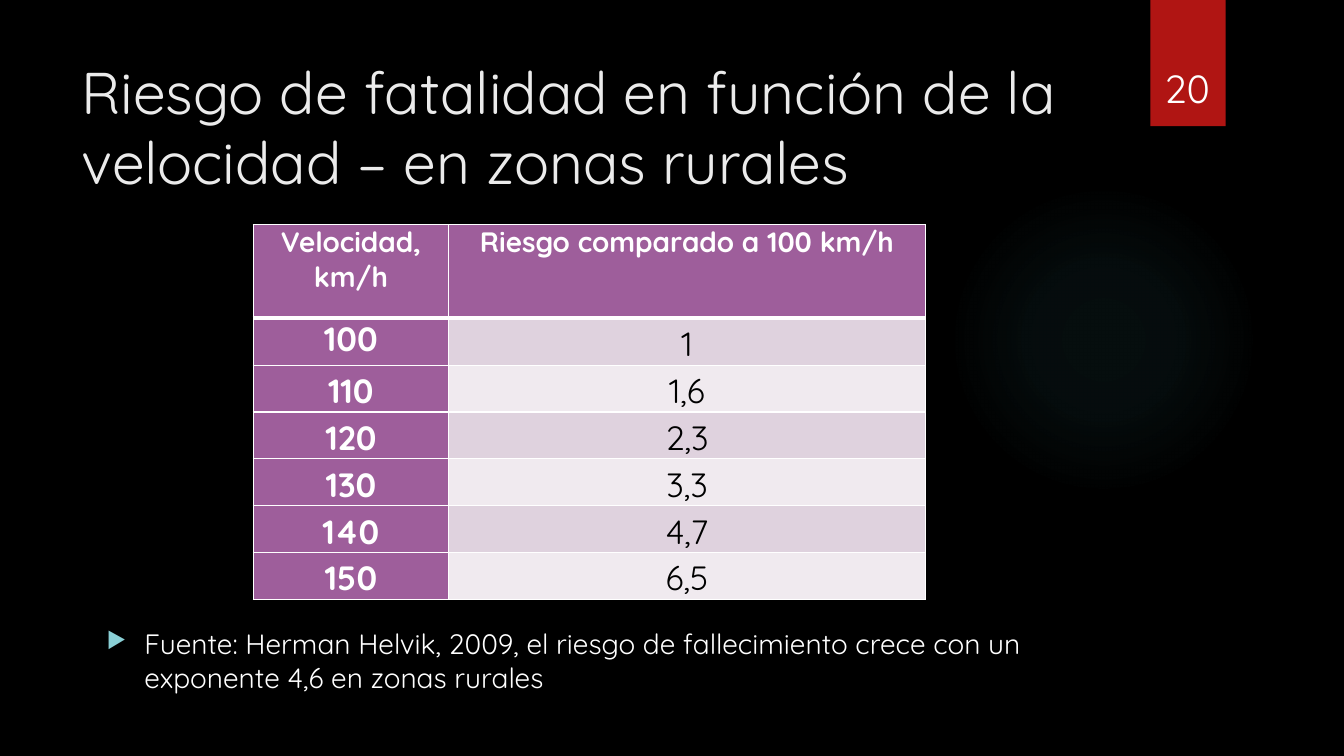
"""Build the slide on fatality risk by speed in rural areas."""
import lxml.etree
import pptx
import pptx.dml.color
import pptx.enum.shapes
import pptx.enum.text
import pptx.oxml
import pptx.oxml.ns
import pptx.util

Cm = pptx.util.Cm
SHAPE = pptx.enum.shapes.MSO_SHAPE
ALIGN = pptx.enum.text.PP_ALIGN
ANCHOR = pptx.enum.text.MSO_ANCHOR
FONT = "Quicksand"
WHITE = "FFFFFF"
PURPLE = "9E5E9B"
BANDS = ("DFD2DE", "F0EAEF")
HEADINGS = ("Velocidad, km/h", "Riesgo comparado a 100 km/h")
RISKS = (("100", "1"), ("110", "1,6"), ("120", "2,3"),
         ("130", "3,3"), ("140", "4,7"), ("150", "6,5"))
GLOW_STOPS = ((0, 7), (36, 6), (69, 0))


def color(value):
    """Turn a hex string into a colour."""
    return pptx.dml.color.RGBColor.from_string(value)


def element(xml):
    """Parse a DrawingML element whose opening tag holds a {ns} slot."""
    return pptx.oxml.parse_xml(xml.replace("{ns}", pptx.oxml.ns.nsdecls("a")))


def write(para, text, size, ink=WHITE, bold=False):
    """Add one formatted run to a paragraph."""
    span = para.add_run()
    span.text = text
    span.font.name = FONT
    span.font.size = pptx.util.Pt(size)
    span.font.bold = bold
    span.font.color.rgb = color(ink)


def add_text(page, place, text, size, ink=WHITE, align=ALIGN.LEFT, anchor=ANCHOR.TOP):
    """Add a wrapped text box and return its paragraph."""
    frame = page.shapes.add_textbox(*map(Cm, place)).text_frame
    frame.word_wrap = True
    frame.vertical_anchor = anchor
    para = frame.paragraphs[0]
    para.alignment = align
    write(para, text, size, ink)
    return para


def add_bullet(para):
    """Give a paragraph a hanging triangle bullet."""
    props = para._p.get_or_add_pPr()
    props.set("marL", str(Cm(0.95)))
    props.set("indent", str(-Cm(0.95)))
    for xml in ('<a:buClr {ns}><a:srgbClr val="8AD0D6"/></a:buClr>',
                '<a:buSzPct {ns} val="80000"/>',
                '<a:buChar {ns} char="▶"/>'):
        props.append(element(xml))


def add_plain_shape(page, kind, place, fill):
    """Add a filled shape without outline or shadow."""
    shape = page.shapes.add_shape(kind, *map(Cm, place))
    shape.shadow.inherit = False
    shape.fill.solid()
    shape.fill.fore_color.rgb = color(fill)
    shape.line.fill.background()
    return shape


def add_glow(page, place, tint):
    """Add a circle that fades out from its centre."""
    circle = add_plain_shape(page, SHAPE.OVAL, place, tint)
    stops = "".join(
        f'<a:gs pos="{pos * 1000}"><a:srgbClr val="{tint}">'
        f'<a:alpha val="{alpha * 1000}"/></a:srgbClr></a:gs>'
        for pos, alpha in GLOW_STOPS)
    gradient = element(
        f'<a:gradFill {{ns}}><a:gsLst>{stops}</a:gsLst><a:path path="circle">'
        '<a:fillToRect l="50000" t="50000" r="50000" b="50000"/></a:path></a:gradFill>')
    props = circle._element.spPr
    props.replace(props.find(pptx.oxml.ns.qn("a:solidFill")), gradient)


def add_borders(cell, widths):
    """Draw white borders, given in points as left, right, top, bottom."""
    props = cell._tc.get_or_add_tcPr()
    for index, (side, width) in enumerate(zip("LRTB", widths)):
        props.insert(index, element(
            f'<a:ln{side} {{ns}} w="{pptx.util.Pt(width)}"><a:solidFill>'
            f'<a:srgbClr val="{WHITE}"/></a:solidFill></a:ln{side}>'))


def fill_cell(cell, text, size, fill, ink, bold, top_aligned, borders):
    """Write and format one centred table cell."""
    cell.margin_left = cell.margin_right = Cm(0.18 if top_aligned else 0.03)
    cell.margin_top = Cm(0 if top_aligned else 0.03)
    cell.margin_bottom = Cm(0)
    cell.vertical_anchor = ANCHOR.TOP if top_aligned else ANCHOR.BOTTOM
    para = cell.text_frame.paragraphs[0]
    para.alignment = ALIGN.CENTER
    write(para, text, size, ink, bold)
    cell.fill.solid()
    cell.fill.fore_color.rgb = color(fill)
    add_borders(cell, borders)


def add_risk_table(page):
    """Add the table of speeds and relative risks."""
    table = page.shapes.add_table(
        len(RISKS) + 1, 2, Cm(6.38), Cm(5.66), Cm(16.94), Cm(9.44)).table
    table.horz_banding = False
    table.columns[0].width = Cm(4.93)
    table.columns[1].width = Cm(12.01)
    for number, texts in enumerate((HEADINGS,) + RISKS):
        heading = number == 0
        table.rows[number].height = Cm(2.36 if heading else 1.18)
        borders = (1, 1, 3 if number == 1 else 1, 3 if heading else 1)
        for column, text in enumerate(texts):
            strong = heading or column == 0
            fill_cell(table.cell(number, column), text, 20 if heading else 24,
                      PURPLE if strong else BANDS[(number - 1) % 2],
                      WHITE if strong else "000000", strong,
                      heading or (number == 1 and column == 0), borders)


def main():
    """Build and save the deck."""
    deck = pptx.Presentation()
    deck.slide_width, deck.slide_height = Cm(33.87), Cm(19.05)
    page = deck.slides.add_slide(deck.slide_layouts[6])
    page.background.fill.solid()
    page.background.fill.fore_color.rgb = color("000000")
    add_glow(page, (23.9, 4.65, 7.82, 7.82), "50B9C1")
    add_plain_shape(page, SHAPE.RECTANGLE, (28.99, 0, 1.9, 3.18), "B01513")
    add_text(page, (1.8, 1.27, 26.14, 3.89),
             "Riesgo de fatalidad en función de la velocidad – en zonas rurales",
             42, "EBEBEB")
    add_risk_table(page)
    add_text(page, (28.75, 0.81, 2.34, 2.13), "20", 28,
             align=ALIGN.CENTER, anchor=ANCHOR.BOTTOM)
    source = add_text(
        page, (2.44, 15.67, 24.84, 2.6),
        "Fuente: Herman Helvik, 2009, el riesgo de fallecimiento crece con un "
        "exponente 4,6 en zonas rurales", 20)
    add_bullet(source)
    deck.save("out.pptx")


if __name__ == "__main__":
    main()
